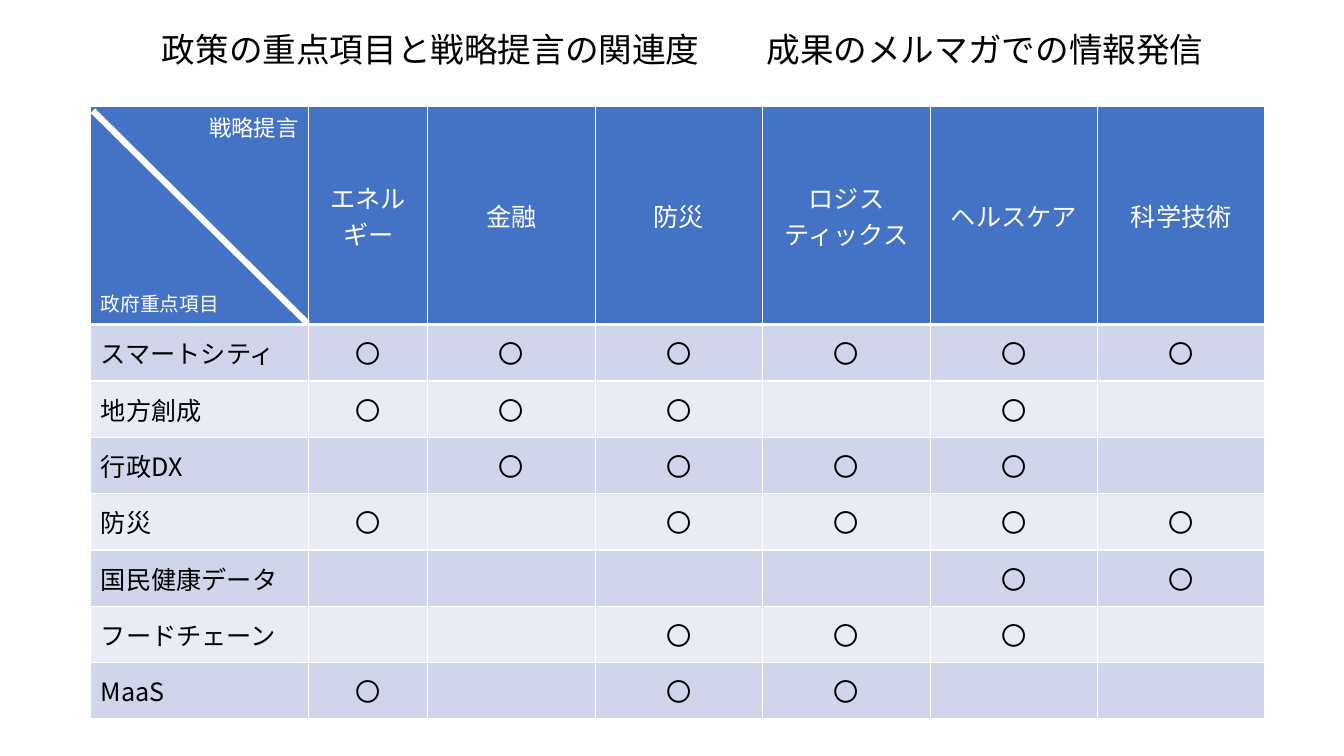
from dataclasses import dataclass

import pptx
import pptx.dml.color
import pptx.enum.shapes
import pptx.enum.text
import pptx.oxml
import pptx.oxml.ns
import pptx.util
from pptx.util import Cm, Pt

ALIGN = pptx.enum.text.PP_ALIGN
ANCHOR = pptx.enum.text.MSO_ANCHOR


@dataclass(frozen=True)
class Theme:
    font: str = "Noto Sans CJK JP"
    black: str = "000000"
    white: str = "FFFFFF"
    header: str = "4472C4"
    bands: tuple = ("CFD5EA", "E9EBF5")
    title_size: int = 24
    body_size: int = 18
    strategy_size: int = 16
    priority_size: int = 14
    border: int = 1
    header_border: int = 3
    diagonal: float = 4.5


THEME = Theme()
TITLE = "政策の重点項目と戦略提言の関連度　　成果のメルマガでの情報発信"
STRATEGIES = ["エネルギー", "金融", "防災", "ロジスティックス", "ヘルスケア", "科学技術"]
MARK = "〇"
# One digit per strategy: 1 where the priority relates to it.
PRIORITIES = {
    "スマートシティ": "111111",
    "地方創成": "111010",
    "行政DX": "011110",
    "防災": "101111",
    "国民健康データ": "000011",
    "フードチェーン": "001110",
    "MaaS": "101100",
}
COLUMN_WIDTHS = [Cm(5.49), Cm(3)] + [Cm(4.22)] * 5
ROW_HEIGHTS = [Cm(5.51)] + [Cm(1.42)] * len(PRIORITIES)


def rgb(colour):
    return pptx.dml.color.RGBColor.from_string(colour)


def apply(target, values):
    for name, value in values.items():
        setattr(target, name, value)


def write(paragraph, text, size, colour, **paragraph_format):
    """Add one run, with the theme font for Latin and East Asian text."""
    apply(paragraph, paragraph_format)
    run = paragraph.add_run()
    run.text = text
    apply(run.font, {"size": Pt(size), "bold": False, "name": THEME.font})
    run.font.color.rgb = rgb(colour)
    east_asian = pptx.oxml.parse_xml(
        f'<a:ea {pptx.oxml.ns.nsdecls("a")} typeface="{THEME.font}"/>')
    run.font._element.append(east_asian)


def add_title(slide):
    frame = slide.shapes.add_textbox(Cm(2.13), Cm(0.36), Cm(29.21), Cm(1.88)).text_frame
    apply(frame, {"word_wrap": True, "vertical_anchor": ANCHOR.MIDDLE,
                  "margin_left": Cm(1.95)})
    write(frame.paragraphs[0], TITLE, THEME.title_size, THEME.black, line_spacing=0.9)


def style_cell(cell, fill, bottom_width):
    cell.fill.solid()
    cell.fill.fore_color.rgb = rgb(fill)
    properties = cell._tc.get_or_add_tcPr()
    widths = {"lnL": THEME.border, "lnR": THEME.border,
              "lnT": THEME.border, "lnB": bottom_width}
    for position, (side, width) in enumerate(widths.items()):
        properties.insert(position, pptx.oxml.parse_xml(
            f'<a:{side} {pptx.oxml.ns.nsdecls("a")} w="{Pt(width)}"><a:solidFill>'
            f'<a:srgbClr val="{THEME.white}"/></a:solidFill></a:{side}>'))


def write_cell(cell, text, colour, alignment):
    cell.vertical_anchor = ANCHOR.MIDDLE
    write(cell.text_frame.paragraphs[0], text, THEME.body_size, colour, alignment=alignment)


def write_corner(cell):
    """Label both axes: columns at the top right, rows at the bottom left."""
    frame = cell.text_frame
    write(frame.paragraphs[0], "戦略提言", THEME.strategy_size, THEME.white,
          alignment=ALIGN.RIGHT)
    write(frame.add_paragraph(), "政府重点項目", THEME.priority_size, THEME.white,
          alignment=ALIGN.LEFT, space_before=Pt(104))


def add_matrix(slide):
    table = slide.shapes.add_table(
        len(ROW_HEIGHTS), len(COLUMN_WIDTHS), Cm(2.29), Cm(2.67),
        sum(COLUMN_WIDTHS), sum(ROW_HEIGHTS)).table
    for column, width in zip(table.columns, COLUMN_WIDTHS):
        column.width = width
    for index, (row, height) in enumerate(zip(table.rows, ROW_HEIGHTS)):
        row.height = height
        fill = THEME.bands[(index - 1) % 2] if index else THEME.header
        for cell in row.cells:
            style_cell(cell, fill, THEME.border if index else THEME.header_border)

    write_corner(table.cell(0, 0))
    for column, strategy in enumerate(STRATEGIES, 1):
        write_cell(table.cell(0, column), strategy, THEME.white, ALIGN.CENTER)
    for row, (priority, relations) in enumerate(PRIORITIES.items(), 1):
        write_cell(table.cell(row, 0), priority, THEME.black, ALIGN.LEFT)
        for column, related in enumerate(relations, 1):
            if related == "1":
                write_cell(table.cell(row, column), MARK, THEME.black, ALIGN.CENTER)


def add_corner_diagonal(slide):
    connector = slide.shapes.add_connector(
        pptx.enum.shapes.MSO_CONNECTOR.STRAIGHT, Cm(2.34), Cm(2.79), Cm(7.75), Cm(8.15))
    connector.line.color.rgb = rgb(THEME.white)
    connector.line.width = Pt(THEME.diagonal)
    connector._element.spPr.append(
        pptx.oxml.parse_xml(f'<a:effectLst {pptx.oxml.ns.nsdecls("a")}/>'))


def main():
    presentation = pptx.Presentation()
    apply(presentation, {"slide_width": Cm(33.87), "slide_height": Cm(19.05)})
    slide = presentation.slides.add_slide(presentation.slide_layouts[6])
    add_title(slide)
    add_matrix(slide)
    add_corner_diagonal(slide)
    presentation.save("out.pptx")


if __name__ == "__main__":
    main()
